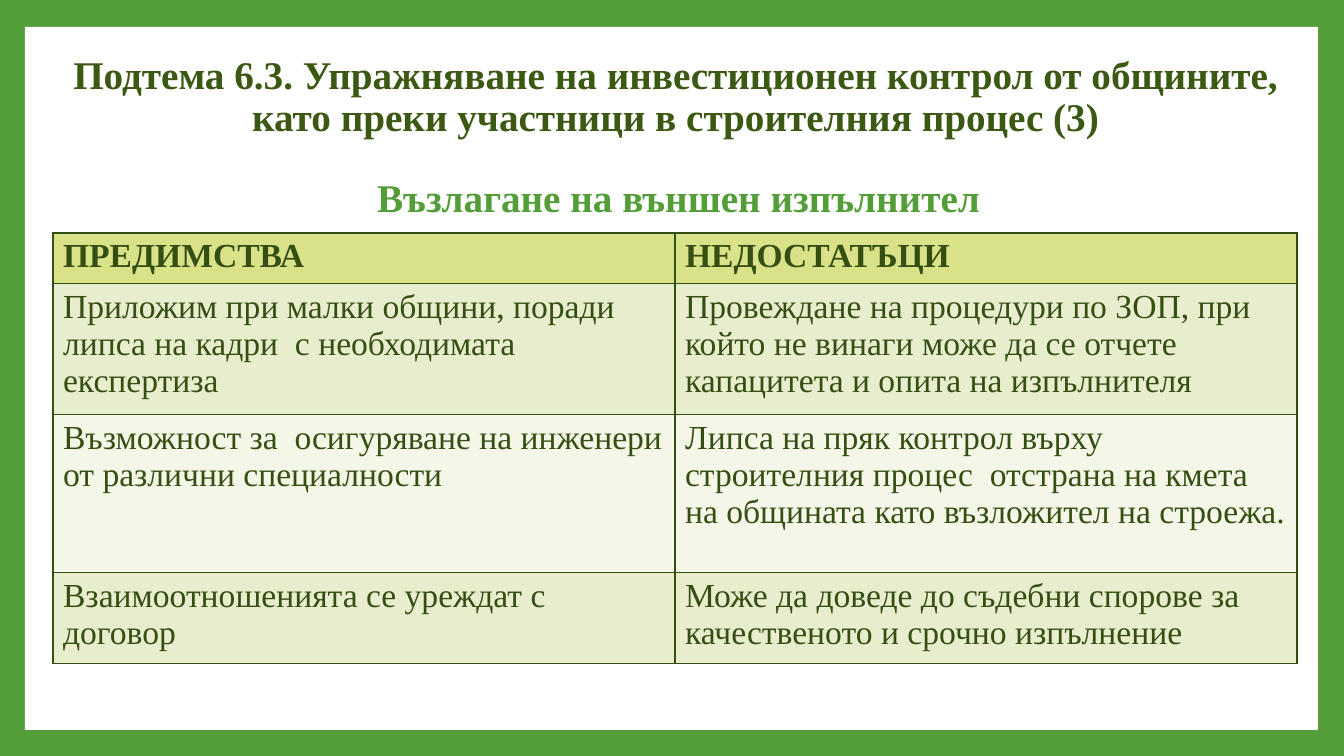
from dataclasses import dataclass

from lxml import etree
from pptx import Presentation
from pptx import util as u
from pptx.dml.color import RGBColor
from pptx.enum import shapes, text
from pptx.oxml import ns

EMU_PER_PX = 12192000 / 1344
FONT = "Times New Roman"

GREEN = RGBColor(0x54, 0x9E, 0x39)
DARK_GREEN = RGBColor(0x3C, 0x59, 0x14)
TABLE_GREEN = RGBColor(0x35, 0x4F, 0x12)
HEADER_FILL = RGBColor(0xD9, 0xE2, 0x89)
BAND_FILL = RGBColor(0xE8, 0xED, 0xCE)
PALE_FILL = RGBColor(0xF4, 0xF6, 0xE8)
WHITE = RGBColor(0xFF, 0xFF, 0xFF)


@dataclass(frozen=True)
class Row:
    height: int
    fill: RGBColor
    advantage: str
    drawback: str
    bold: bool = False


COLUMN_WIDTH = 622
ROWS = [
    Row(50, HEADER_FILL, "ПРЕДИМСТВА", "НЕДОСТАТЪЦИ", bold=True),
    Row(121, BAND_FILL,
        "Приложим при малки общини, поради липса на кадри  с необходимата експертиза",
        "Провеждане на процедури по ЗОП, при който не винаги може да се отчете "
        "капацитета и опита на изпълнителя"),
    Row(158, PALE_FILL,
        "Възможност за  осигуряване на инженери от различни специалности",
        "Липса на пряк контрол върху строителния процес  отстрана на кмета "
        "на общината като възложител на строежа."),
    Row(85, BAND_FILL,
        "Взаимоотношенията се уреждат с договор",
        "Може да доведе до съдебни спорове за качественото и срочно изпълнение"),
]


def px(length: int) -> u.Emu:
    return u.Emu(round(length * EMU_PER_PX))


def box(left: int, top: int, width: int, height: int) -> list[u.Emu]:
    return [px(length) for length in (left, top, width, height)]


def write(frame, words: str, size: int, color: RGBColor, bold: bool):
    """Fill a text frame with one formatted paragraph and return it."""
    frame.text = words
    paragraph = frame.paragraphs[0]
    for run in paragraph.runs:
        run.font.name = FONT
        run.font.size = u.Pt(size)
        run.font.color.rgb = color
        run.font.bold = bold
    return paragraph


def write_heading(frame, words: str, color: RGBColor) -> None:
    frame.word_wrap = True
    paragraph = write(frame, words, 28, color, True)
    paragraph.alignment = text.PP_ALIGN.CENTER
    paragraph.line_spacing = 0.9


def add_borders(cell) -> None:
    properties = cell._tc.get_or_add_tcPr()
    for index, side in enumerate(("a:lnL", "a:lnR", "a:lnT", "a:lnB")):
        line = etree.Element(ns.qn(side), w=str(u.Pt(1)))
        fill = etree.SubElement(line, ns.qn("a:solidFill"))
        etree.SubElement(fill, ns.qn("a:srgbClr"), val=str(TABLE_GREEN))
        properties.insert(index, line)


def add_comparison(slide) -> None:
    height = sum(row.height for row in ROWS)
    table = slide.shapes.add_table(
        len(ROWS), 2, *box(53, 233, 2 * COLUMN_WIDTH, height)).table
    for column in table.columns:
        column.width = px(COLUMN_WIDTH)
    for index, row in enumerate(ROWS):
        table.rows[index].height = px(row.height)
        for cell, words in zip(table.rows[index].cells, (row.advantage, row.drawback)):
            write(cell.text_frame, words, 24, TABLE_GREEN, row.bold)
            cell.fill.solid()
            cell.fill.fore_color.rgb = row.fill
            add_borders(cell)


def main() -> None:
    deck = Presentation()
    deck.slide_width, deck.slide_height = px(1344), px(756)
    slide = deck.slides.add_slide(deck.slide_layouts[5])

    # Green frame around a white panel, placed behind the title
    slide.background.fill.solid()
    slide.background.fill.fore_color.rgb = GREEN
    panel = slide.shapes.add_shape(shapes.MSO_SHAPE.RECTANGLE, *box(25, 27, 1293, 703))
    panel.shadow.inherit = False
    panel.fill.solid()
    panel.fill.fore_color.rgb = WHITE
    panel.line.fill.background()
    slide.shapes.title._element.addprevious(panel._element)

    # Title
    title = slide.shapes.title
    title.left, title.top, title.width, title.height = box(41, 39, 1269, 117)
    title.text_frame.vertical_anchor = text.MSO_ANCHOR.MIDDLE
    write_heading(
        title.text_frame,
        "Подтема 6.3. Упражняване на инвестиционен контрол от общините, "
        "като преки участници в строителния процес (3)", DARK_GREEN)

    # Subtitle
    subtitle = slide.shapes.add_textbox(*box(44, 174, 1269, 55))
    write_heading(subtitle.text_frame, "Възлагане на външен изпълнител", GREEN)

    # Advantages and drawbacks
    add_comparison(slide)

    deck.save("out.pptx")


if __name__ == "__main__":
    main()
